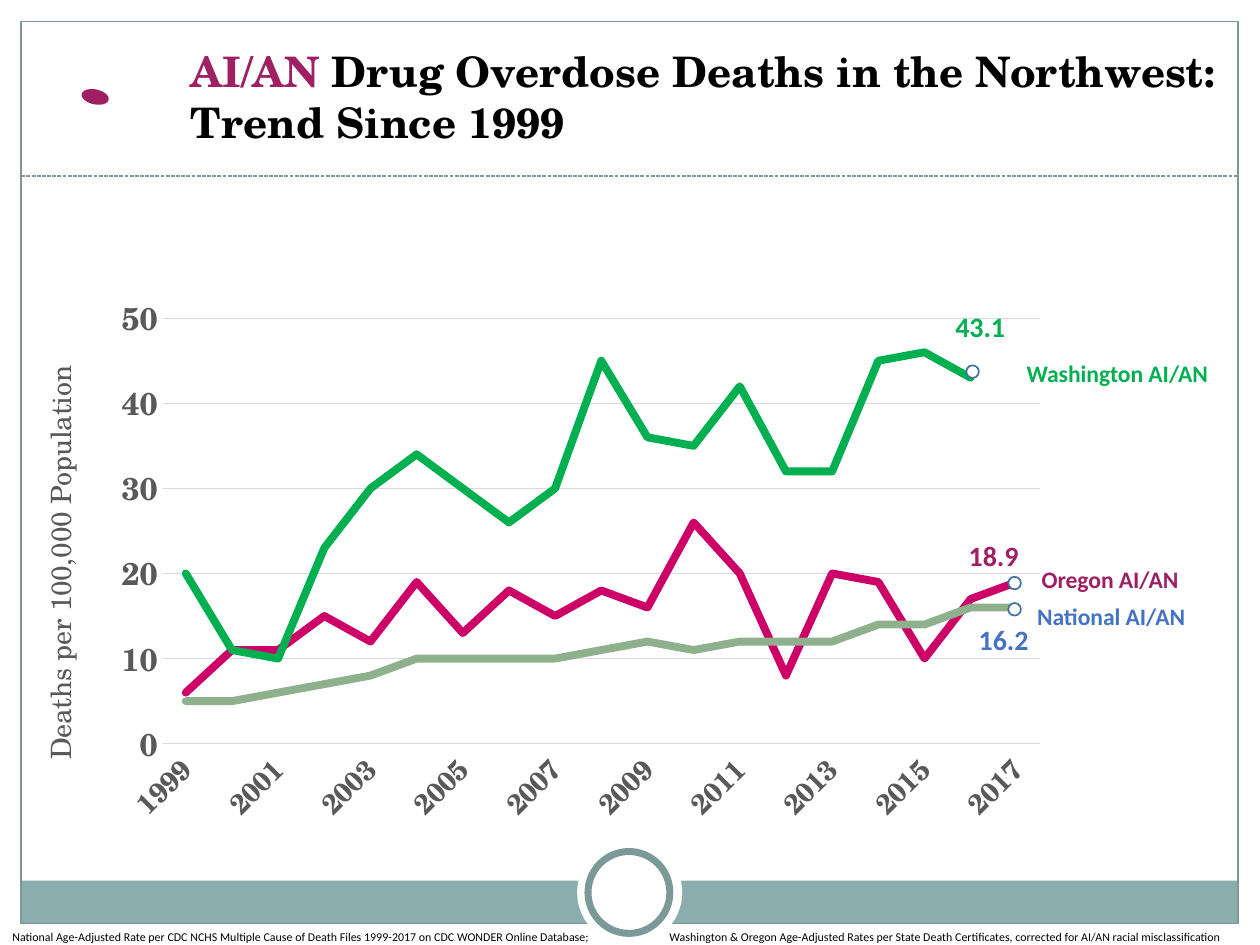
from lxml.etree import SubElement
from pptx import Presentation
from pptx.chart.data import CategoryChartData
from pptx.dml.color import RGBColor
from pptx.enum.chart import XL_CHART_TYPE, XL_TICK_MARK
from pptx.enum.dml import MSO_LINE
from pptx.enum.shapes import MSO_CONNECTOR, MSO_SHAPE
from pptx.oxml import parse_xml
from pptx.oxml.ns import nsdecls, qn
from pptx.util import Pt

WHITE = RGBColor(0xFF, 0xFF, 0xFF)
BLACK = RGBColor(0, 0, 0)
GRAY = RGBColor(0x59, 0x59, 0x59)
GRID = RGBColor(0xD9, 0xD9, 0xD9)
BAND = RGBColor(0x8C, 0xAD, 0xAE)
FRAME = RGBColor(0x7C, 0x99, 0x9A)
PLUM = RGBColor(0x9F, 0x1F, 0x63)
PINK = RGBColor(0xCC, 0x00, 0x66)
SAGE = RGBColor(0x8F, 0xB0, 0x8C)
GREEN = RGBColor(0x00, 0xB0, 0x50)
BLUE = RGBColor(0x44, 0x72, 0xC4)
MARKER = RGBColor(0x43, 0x73, 0x9E)
SERIF, SANS = "TeX Gyre Schola", "Calibri"

# Content
TITLE = [
    [("AI/AN ", PLUM), ("Drug Overdose Deaths in the Northwest:", BLACK)],
    [("Trend Since 1999", BLACK)],
]
AXIS_TITLE = "Deaths per 100,000 Population"
YEARS = [str(year) for year in range(1999, 2018)]
SERIES = [
    ("Oregon AI/AN", PINK,
     [6, 11, 11, 15, 12, 19, 13, 18, 15, 18, 16, 26, 20, 8, 20, 19, 10, 17, 19]),
    ("National AI/AN", SAGE,
     [5, 5, 6, 7, 8, 10, 10, 10, 10, 11, 12, 11, 12, 12, 12, 14, 14, 16, 16]),
    ("Washington AI/AN", GREEN,
     [20, 11, 10, 23, 30, 34, 30, 26, 30, 45, 36, 35, 42, 32, 32, 45, 46, 43, None]),
]
# text, colour, size, left, top, width, height
LABELS = [
    ("Washington AI/AN", GREEN, 13.5, 579.6, 201.6, 211, 23.8),
    ("National AI/AN", BLUE, 13.5, 585.6, 340.6, 205, 23.8),
    ("43.1", GREEN, 16, 538.8, 173.5, 75, 26.6),
    ("16.2", BLUE, 16, 552.2, 352.5, 75, 26.6),
    ("Oregon AI/AN", PLUM, 13.5, 588.2, 319, 180, 23.8),
    ("18.9", PLUM, 16, 546.5, 304.2, 75, 26.6),
]
END_POINTS = [(552.2, 208.8), (576.2, 329.6), (576.2, 344.6)]
SOURCES = [
    "National Age-Adjusted Rate per CDC NCHS Multiple Cause of Death Files "
    "1999-2017 on CDC WONDER Online Database;",
    "Washington & Oregon Age-Adjusted Rates per State Death Certificates, "
    "corrected for AI/AN racial misclassification",
]

prs = Presentation()
prs.slide_width, prs.slide_height = Pt(720), Pt(540)
s = prs.slides.add_slide(prs.slide_layouts[6])


def add_shape(kind, box, fill=None, line=None, width=0.75):
    sp = s.shapes.add_shape(kind, *map(Pt, box))
    sp.shadow.inherit = False
    if fill is None:
        sp.fill.background()
    else:
        sp.fill.solid()
        sp.fill.fore_color.rgb = fill
    if line is None:
        sp.line.fill.background()
    else:
        sp.line.color.rgb = line
        sp.line.width = Pt(width)
    return sp


def set_font(font, name, size, color, bold=False):
    font.name, font.size, font.bold = name, Pt(size), bold
    font.color.rgb = color


def add_text_frame(box):
    tf = s.shapes.add_textbox(*map(Pt, box)).text_frame
    tf.word_wrap = True
    return tf


def set_layout(parent, after, **parts):
    """Place a chart part by fractions of the chart area."""
    for old in parent.findall(qn("c:layout")):
        parent.remove(old)
    layout = parse_xml(f"<c:layout {nsdecls('c')}/>")
    manual = SubElement(layout, qn("c:manualLayout"))
    for tag, val in parts.items():
        SubElement(manual, qn(f"c:{tag}")).set("val", str(val))
    if after is None:
        parent.insert(0, layout)
    else:
        after.addnext(layout)


# Frame, bottom band, divider and ring
for box in [(0, 0, 720, 109.4), (0, 0, 12.2, 540), (707.8, 0, 12.2, 540)]:
    add_shape(MSO_SHAPE.RECTANGLE, box, WHITE)
add_shape(MSO_SHAPE.RECTANGLE, (11.8, 503.3, 695.7, 24.5), BAND)
add_shape(MSO_SHAPE.RECTANGLE, (12, 12.2, 695.5, 515.5), line=FRAME)
divider = s.shapes.add_connector(
    MSO_CONNECTOR.STRAIGHT, Pt(12.2), Pt(100.6), Pt(707.8), Pt(100.6))
divider.line.color.rgb = FRAME
divider.line.width = Pt(0.75)
divider.line.dash_style = MSO_LINE.SQUARE_DOT
SubElement(divider._element.spPr, qn("a:effectLst"))
add_shape(MSO_SHAPE.OVAL, (329.8, 480, 60, 60), WHITE)
add_shape(MSO_SHAPE.OVAL, (336, 486.6, 46.8, 46.8), WHITE, FRAME, 4)

# Title
tf = add_text_frame((101.8, 22.5, 653.8, 65.5))
for i, runs in enumerate(TITLE):
    p = tf.paragraphs[0] if i == 0 else tf.add_paragraph()
    for text, color in runs:
        r = p.add_run()
        r.text = text
        set_font(r.font, SERIF, 24, color, True)
add_shape(MSO_SHAPE.OVAL, (46.5, 51.1, 15.8, 8.6), PLUM).rotation = 12

# Line chart
data = CategoryChartData()
data.categories = YEARS
for name, _, values in SERIES:
    data.add_series(name, values)
chart = s.shapes.add_chart(
    XL_CHART_TYPE.LINE, Pt(12.2), Pt(162), Pt(594), Pt(315.4), data).chart
chart.has_legend = chart.has_title = False
set_font(chart.font, SERIF, 10, BLACK)
plot = chart.plots[0]
plot.vary_by_categories = False
for series, (_, color, _) in zip(plot.series, SERIES):
    series.smooth = False
    line = series.format.line
    line.color.rgb = color
    line.width = Pt(4.5)
    ln = series._element.spPr.find(qn("a:ln"))
    ln.set("cap", "rnd")
    SubElement(ln, qn("a:round"))

years = chart.category_axis
years.major_tick_mark = years.minor_tick_mark = XL_TICK_MARK.NONE
set_font(years.tick_labels.font, SERIF, 16, GRAY, True)
years.format.line.color.rgb = GRID
years.format.line.width = Pt(0.75)
years._element.find(qn("c:txPr")).find(qn("a:bodyPr")).set("rot", "-2700000")
skip = parse_xml(f'<c:tickLblSkip {nsdecls("c")} val="2"/>')
years._element.find(qn("c:noMultiLvlLbl")).addprevious(skip)

rates = chart.value_axis
rates.minimum_scale, rates.maximum_scale, rates.major_unit = 0, 50, 10
rates.major_tick_mark = rates.minor_tick_mark = XL_TICK_MARK.NONE
set_font(rates.tick_labels.font, SERIF, 18, GRAY, True)
rates.tick_labels.number_format = "0"
rates.tick_labels.number_format_is_linked = False
rates.format.line.fill.background()
rates.major_gridlines.format.line.color.rgb = GRID
rates.major_gridlines.format.line.width = Pt(0.75)
tf = rates.axis_title.text_frame
tf.text = AXIS_TITLE
set_font(tf.paragraphs[0].runs[0].font, SERIF, 16, GRAY)
tf._txBody.find(qn("a:bodyPr")).set("rot", "-5400000")

title = rates.axis_title._element
set_layout(title, title.find(qn("c:tx")), xMode="edge", yMode="edge", x=0.01, y=0.14)
set_layout(chart._chartSpace.chart.plotArea, None, layoutTarget="inner",
           xMode="edge", yMode="edge", x=0.136, y=0.063, w=0.844, h=0.771)

# Series names, end values and end markers
for text, color, size, *box in LABELS:
    tf = add_text_frame(box)
    tf.text = text
    set_font(tf.paragraphs[0].runs[0].font, SANS, size, color, True)
for left, top in END_POINTS:
    add_shape(MSO_SHAPE.OVAL, (left, top, 7.2, 7.2), WHITE, MARKER, 1)

# Sources, the second one at a tab stop
tf = add_text_frame((0, 527.4, 801.4, 15.8))
p = tf.paragraphs[0]
p.text = "\t".join(SOURCES)
tabs = SubElement(p._p.get_or_add_pPr(), qn("a:tabLst"))
SubElement(tabs, qn("a:tab"), pos=str(Pt(375.5)), algn="l")
for r in p.runs:
    set_font(r.font, SANS, 6.8, BLACK)

prs.save("out.pptx")
